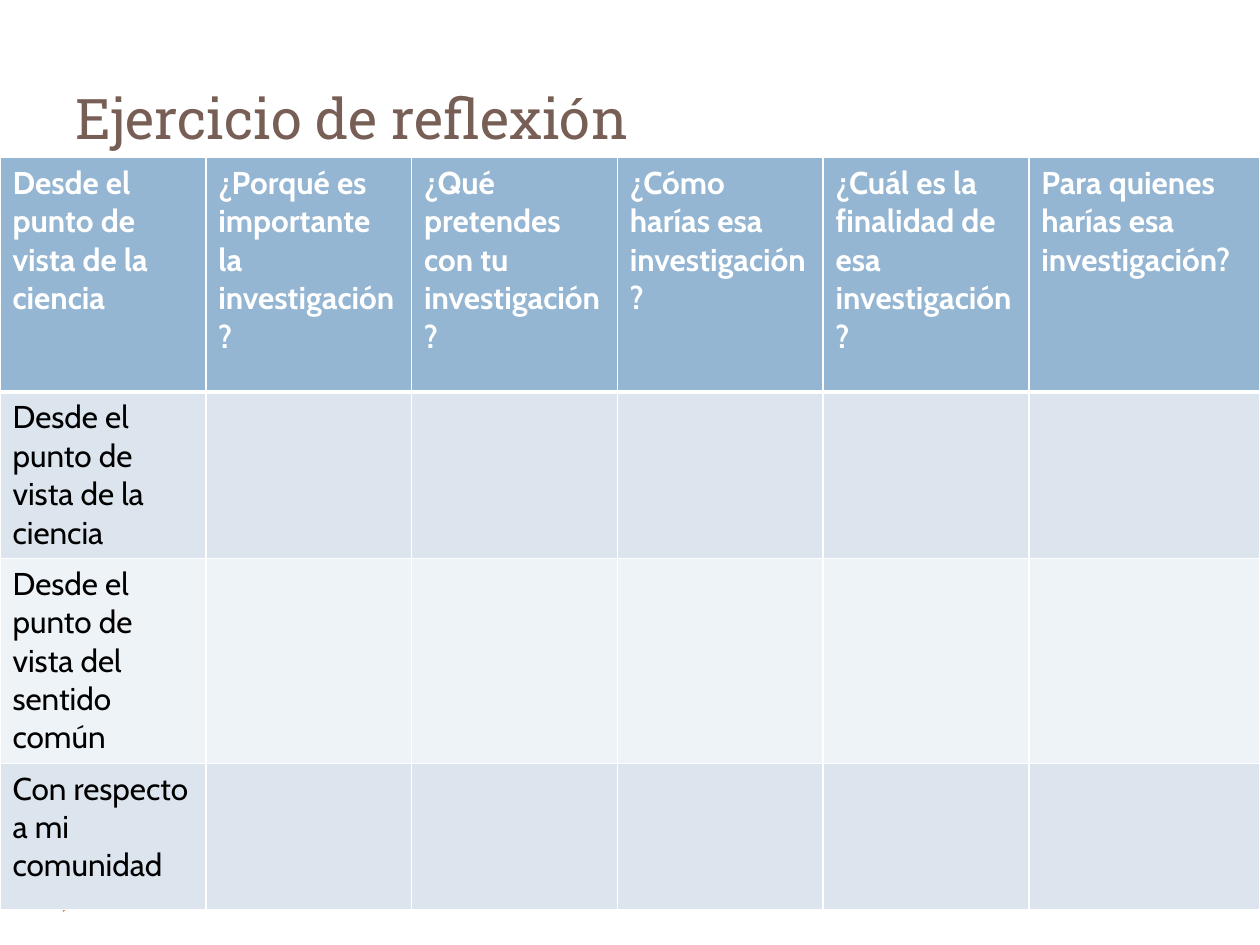
import pptx
import pptx.util
import pptx.dml.color
import pptx.enum.dml
import pptx.enum.shapes
import pptx.enum.text
import pptx.oxml
import lxml.etree

Pt = pptx.util.Pt
COLORS = {
    "title": "775F55",
    "accent": "DD8047",
    "header": "94B6D2",
    "band_dark": "DCE5EE",
    "band_light": "EEF3F7",
    "white": "FFFFFF",
    "black": "000000",
}
HEADERS = [
    "Desde el punto de vista de la ciencia",
    "¿Porqué es importante la investigación?",
    "¿Qué pretendes con tu investigación?",
    "¿Cómo harías esa investigación?",
    "¿Cuál es la finalidad de esa investigación?",
    "Para quienes harías esa investigación?",
]
ROW_LABELS = [
    "Desde el punto de vista de la ciencia",
    "Desde el punto de vista del sentido común",
    "Con respecto a mi comunidad",
]
COL_WIDTHS = [117.6] * 5 + [132]
ROW_HEIGHTS = [134, 83.5, 108.7, 83.5]


def rgb(name):
    return pptx.dml.color.RGBColor.from_string(COLORS[name])


def set_text(tf, text, size=18, font="Cabin", color="black", bold=False):
    p = tf.paragraphs[0]
    p.alignment = pptx.enum.text.PP_ALIGN.LEFT
    r = p.add_run()
    r.text = text
    r.font.size = Pt(size)
    r.font.name = font
    r.font.bold = bold
    r.font.color.rgb = rgb(color)


def set_borders(cell, bottom):
    """White borders of 1 pt, with the bottom width given in points."""
    tc_pr = cell._tc.get_or_add_tcPr()
    widths = {"lnL": 1, "lnR": 1, "lnT": 1, "lnB": bottom}
    for i, (tag, width) in enumerate(widths.items()):
        tc_pr.insert(i, pptx.oxml.parse_xml(
            '<a:%s xmlns:a="http://schemas.openxmlformats.org/drawingml/2006/main" w="%d">'
            '<a:solidFill><a:srgbClr val="%s"/></a:solidFill></a:%s>'
            % (tag, Pt(width), COLORS["white"], tag)))


def add_rule(s, left, top, width):
    line = s.shapes.add_connector(
        pptx.enum.shapes.MSO_CONNECTOR.STRAIGHT,
        Pt(left), Pt(top), Pt(left + width), Pt(top))
    line.line.color.rgb = rgb("accent")
    line.line.width = Pt(0.75)
    line.line.dash_style = pptx.enum.dml.MSO_LINE.DASH
    lxml.etree.SubElement(line._element.spPr, pptx.oxml.ns.qn("a:effectLst"))


def add_frame(s, left, top, width, height):
    """Dashed rules above and below the content, with a footer marker."""
    for y in (top + height, top):
        add_rule(s, left, y, width)
    sp = s.shapes.add_shape(
        pptx.enum.shapes.MSO_SHAPE.ISOSCELES_TRIANGLE,
        Pt(left - 2.9), Pt(top + height + 8.6), Pt(15), Pt(9.4))
    sp.rotation = 90
    sp.shadow.inherit = False
    sp.fill.solid()
    sp.fill.fore_color.rgb = rgb("accent")
    sp.line.fill.background()


def add_title(s, left, top, width, height):
    sp = s.shapes.title
    sp.left, sp.top, sp.width, sp.height = map(Pt, (left, top, width, height))
    tf = sp.text_frame
    tf.word_wrap = True
    tf.vertical_anchor = pptx.enum.text.MSO_ANCHOR.BOTTOM
    set_text(tf, "Ejercicio de reflexión", size=32, font="Roboto Slab", color="title")


def add_reflection_table(s, left, top):
    rows = [HEADERS] + [[label] + [""] * (len(HEADERS) - 1) for label in ROW_LABELS]
    table = s.shapes.add_table(
        len(rows), len(HEADERS), Pt(left), Pt(top),
        Pt(sum(COL_WIDTHS)), Pt(sum(ROW_HEIGHTS))).table
    for column, width in zip(table.columns, COL_WIDTHS):
        column.width = Pt(width)
    for i, (row, texts) in enumerate(zip(table.rows, rows)):
        row.height = Pt(ROW_HEIGHTS[i])
        header = i == 0
        fill = "header" if header else "band_dark" if i % 2 else "band_light"
        for cell, text in zip(row.cells, texts):
            cell.fill.solid()
            cell.fill.fore_color.rgb = rgb(fill)
            set_borders(cell, bottom=3 if header else 1)
            if text:
                set_text(cell.text_frame, text, bold=header,
                         color="white" if header else "black")


def main():
    prs = pptx.Presentation()
    prs.slide_width, prs.slide_height = Pt(720), Pt(540)
    s = prs.slides.add_slide(prs.slide_layouts[5])
    s.background.fill.solid()
    s.background.fill.fore_color.rgb = rgb("white")
    add_frame(s, 36, 90, 648, 410.4)
    add_title(s, 36, 12.2, 648, 77.8)
    add_reflection_table(s, 0, 90)
    prs.save("out.pptx")


if __name__ == "__main__":
    main()
